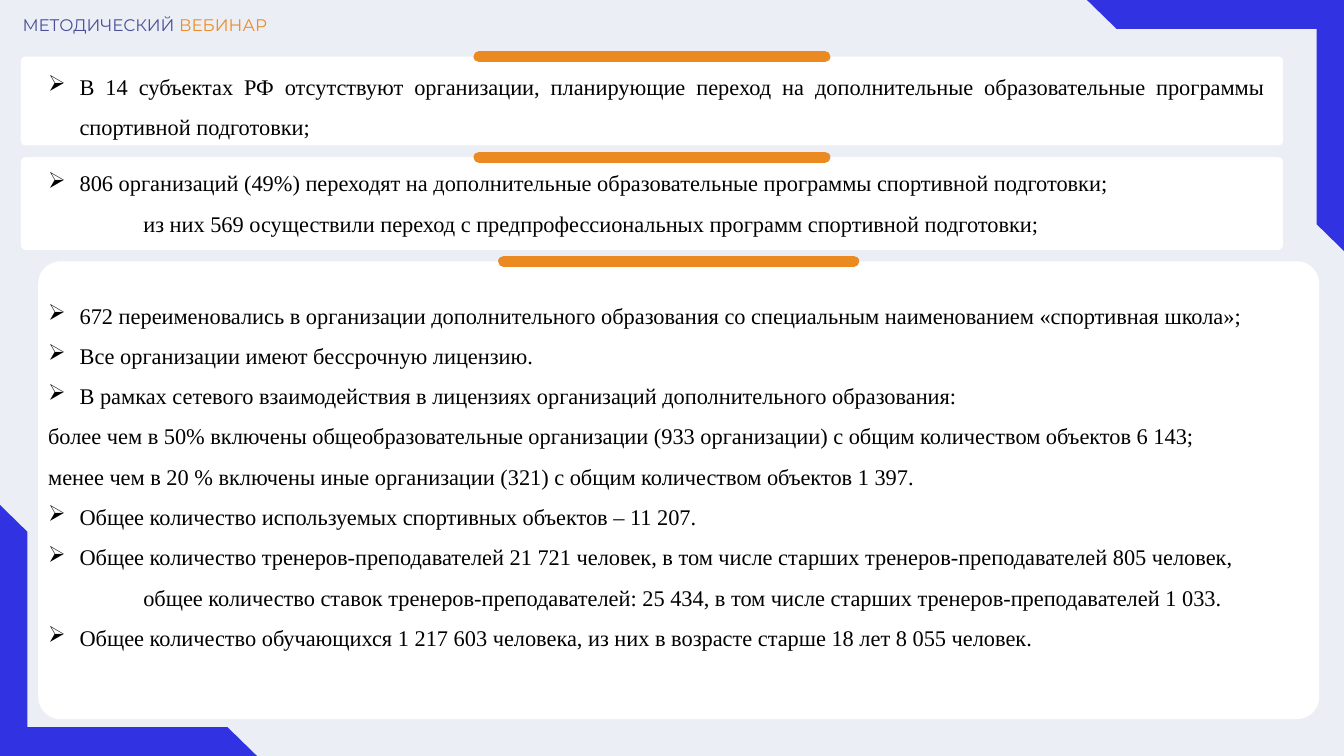
from lxml import etree
from pptx import Presentation
from pptx import util as u
from pptx.dml.color import RGBColor
from pptx.enum import shapes, text
from pptx.oxml.ns import qn

HEADER = [("МЕТОДИЧЕСКИЙ ", "indigo"), ("ВЕБИНАР", "heading_orange")]

BULLET, PLAIN, INDENTED = "bullet", "plain", "indented"
PANELS = [
    {"box": (15, 40.4, 901.4, 63.4), "bar": 247, "text": (27.3, 38.9, 883.4, 62.6), "lines": [
        (BULLET, "В 14 субъектах РФ отсутствуют организации, планирующие переход на дополнительные образовательные программы спортивной подготовки;"),
    ]},
    {"box": (15, 112.3, 901.4, 66.2), "bar": 247, "text": (27.3, 108, 890, 62.6), "lines": [
        (BULLET, "806 организаций (49%) переходят на дополнительные образовательные программы спортивной подготовки;"),
        (INDENTED, "из них 569 осуществили переход с предпрофессиональных программ спортивной подготовки;"),
    ]},
    {"box": (27.3, 186.7, 915, 327), "bar": 250, "text": (27.3, 202.4, 905.8, 265.7), "lines": [
        (BULLET, "672 переименовались в организации дополнительного образования со специальным наименованием «спортивная школа»;"),
        (BULLET, "Все организации имеют бессрочную лицензию."),
        (BULLET, "В рамках сетевого взаимодействия в лицензиях организаций дополнительного образования:"),
        (PLAIN, "более чем в 50% включены общеобразовательные организации (933 организации) с общим количеством объектов 6 143;"),
        (PLAIN, "менее чем в 20 % включены иные организации (321) с общим количеством объектов 1 397."),
        (BULLET, "Общее количество используемых спортивных объектов – 11 207."),
        (BULLET, "Общее количество тренеров-преподавателей 21 721 человек, в том числе старших тренеров-преподавателей 805 человек,"),
        (INDENTED, "общее количество ставок тренеров-преподавателей: 25 434, в том числе старших тренеров-преподавателей 1 033."),
        (BULLET, "Общее количество обучающихся 1 217 603 человека, из них в возрасте старше 18 лет 8 055 человек."),
    ]},
]

THEME = {
    "background": "ECEEF6", "indigo": "495097", "heading_orange": "EC8C26",
    "corner": "3133E2", "panel": "FFFFFF", "bar": "EC8A22", "body": "000000",
    "heading_font": "Montserrat", "body_font": "Times New Roman",
    "heading_size": 12, "body_size": 16, "bar_weight": 8,
}
MARGINS = {BULLET: (22.5, -22.5), PLAIN: (0, 0), INDENTED: (68, 0)}
SLIDE_WIDTH, SLIDE_HEIGHT = 960, 540
CORNER_WIDTH, CORNER_HEIGHT = 179.3, 183.6


def color(name):
    return RGBColor.from_string(THEME[name])


def points(*values):
    return [u.Pt(value) for value in values]


def add_preset(slide, kind, box, fill, adjustments, rotation=0):
    shape = slide.shapes.add_shape(kind, *points(*box))
    shape.shadow.inherit = False
    shape.fill.solid()
    shape.fill.fore_color.rgb = color(fill)
    shape.line.fill.background()
    shape.rotation = rotation
    for index, value in enumerate(adjustments):
        shape.adjustments[index] = value


def add_corner(slide, center_x, center_y, rotation):
    box = (center_x - CORNER_WIDTH / 2, center_y - CORNER_HEIGHT / 2, CORNER_WIDTH, CORNER_HEIGHT)
    add_preset(slide, shapes.MSO_SHAPE.HALF_FRAME, box, "corner", (0.109, 0.115), rotation)


def add_bar(slide, center_x, y, length):
    bar = slide.shapes.add_connector(
        shapes.MSO_CONNECTOR.STRAIGHT,
        *points(center_x - length / 2, y, center_x + length / 2, y))
    bar.line.color.rgb = color("bar")
    bar.line.width = u.Pt(THEME["bar_weight"])
    bar.line._get_or_add_ln().set("cap", "rnd")
    etree.SubElement(bar._element.spPr, qn("a:effectLst"))


def add_text(slide, box, lines, font, size, align=None, spacing=None):
    frame = slide.shapes.add_textbox(*points(*box)).text_frame
    frame.word_wrap = True
    for index, (style, runs) in enumerate(lines):
        paragraph = frame.paragraphs[0] if index == 0 else frame.add_paragraph()
        properties = paragraph._p.get_or_add_pPr()
        margin, indent = MARGINS[style]
        properties.set("marL", str(u.Pt(margin)))
        properties.set("indent", str(u.Pt(indent)))
        if style == BULLET:
            etree.SubElement(properties, qn("a:buChar")).set("char", "➢")
        paragraph.alignment = align
        paragraph.line_spacing = spacing
        for words, run_color in runs:
            run = paragraph.add_run()
            run.text = words
            run.font.name = THEME[font]
            run.font.size = u.Pt(THEME[size])
            run.font.color.rgb = color(run_color)


def main():
    presentation = Presentation()
    presentation.slide_width, presentation.slide_height = points(SLIDE_WIDTH, SLIDE_HEIGHT)
    slide = presentation.slides.add_slide(presentation.slide_layouts[6])
    slide.background.fill.solid()
    slide.background.fill.fore_color.rgb = color("background")

    add_text(slide, (9, 7.2, 200, 36), [(PLAIN, HEADER)], "heading_font", "heading_size")
    inset_x, inset_y = CORNER_HEIGHT / 2, CORNER_WIDTH / 2
    add_corner(slide, SLIDE_WIDTH - inset_x, inset_y, 90)
    add_corner(slide, inset_x, SLIDE_HEIGHT - inset_y, 270)

    for panel in PANELS:
        left, top, width, _ = panel["box"]
        add_preset(slide, shapes.MSO_SHAPE.ROUNDED_RECTANGLE, panel["box"], "panel", (0.049,))
        add_bar(slide, left + width / 2, top, panel["bar"])
        lines = [(style, [(words, "body")]) for style, words in panel["lines"]]
        add_text(slide, panel["text"], lines, "body_font", "body_size",
                 align=text.PP_ALIGN.JUSTIFY, spacing=1.5)

    presentation.save("out.pptx")


if __name__ == "__main__":
    main()
